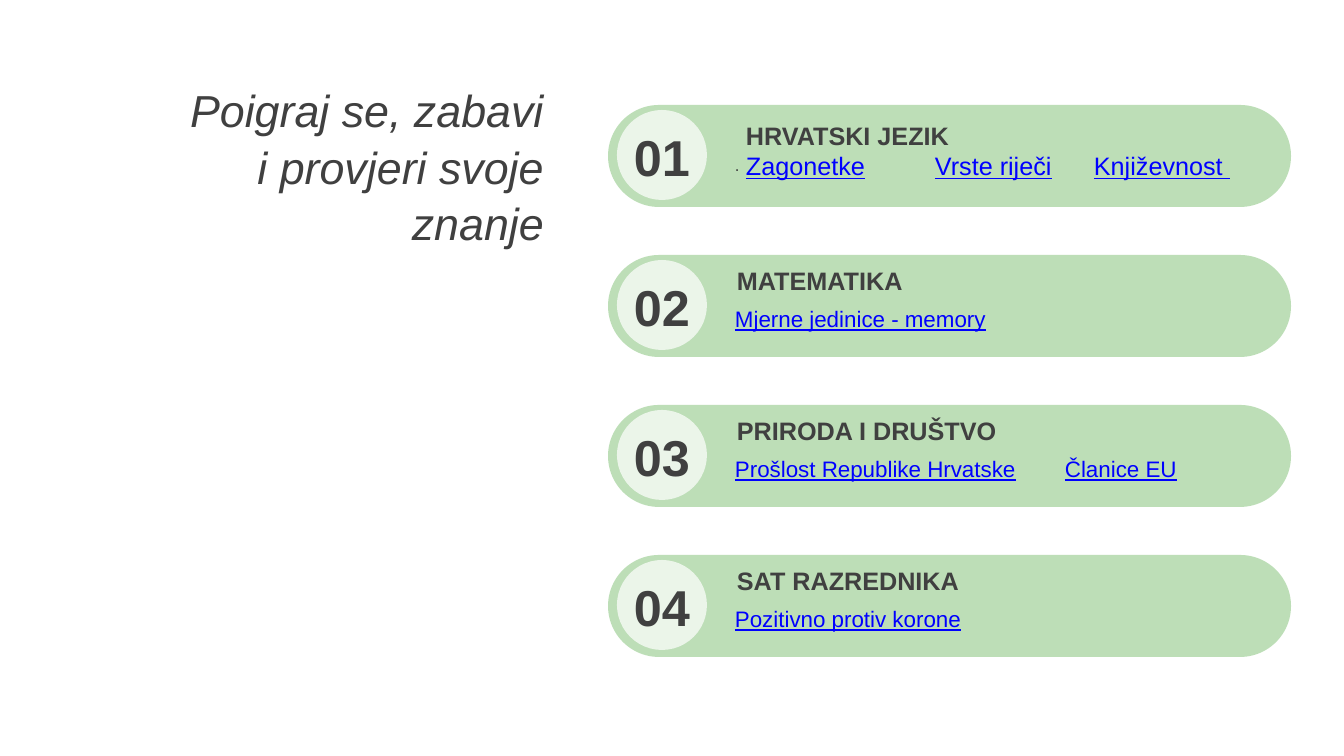
"""Builds a slide with a quiz title and four numbered subject bars."""
from lxml import etree
from pptx import Presentation, util as u
from pptx.dml.color import RGBColor
from pptx.enum import shapes, text
from pptx.oxml.ns import qn

TITLE = "Poigraj se, zabavi i provjeri svoje znanje"
MAIN_LINKS = ["Zagonetke", "Vrste riječi", "Književnost "]
SUBJECTS = [
    ("HRVATSKI JEZIK", ["."]),
    ("MATEMATIKA", ["Mjerne jedinice - memory"]),
    ("PRIRODA I DRUŠTVO", ["Prošlost Republike Hrvatske", "Članice EU"]),
    ("SAT RAZREDNIKA", ["Pozitivno protiv korone"]),
]
MAIN_TABS = [189, 348]
LINK_TABS = [330]
FONT, DARK, LINK, GREEN, WHITE = "Arial", "404040", "0000FF", "5AAE4C", "FFFFFF"
BAR_LEFT, BAR_TOP, BAR_PITCH = 608, 105, 150


def px(length):
    return u.Emu(round(length * 914400 / 100.8))


def rgb(color):
    return RGBColor.from_string(color)


def add_panel(parent, kind, box, color, opacity):
    shape = parent.shapes.add_shape(kind, *map(px, box))
    shape.shadow.inherit = False
    shape.fill.solid()
    shape.fill.fore_color.rgb = rgb(color)
    shape.line.fill.background()
    fill = shape._element.spPr.find(qn("a:solidFill"))
    etree.SubElement(fill[0], qn("a:alpha"), val=str(opacity * 1000))
    return shape


def set_tabs(paragraph, stops):
    tab_list = etree.SubElement(paragraph._p.get_or_add_pPr(), qn("a:tabLst"))
    for stop in stops:
        etree.SubElement(tab_list, qn("a:tab"), pos=str(px(stop)), algn="l")


def add_text(parent, box, lines, size, color=DARK, bold=False, italic=False,
             align=text.PP_ALIGN.LEFT, anchor=text.MSO_ANCHOR.TOP,
             inset=12, spacing=None, tabs=()):
    shape = parent.shapes.add_textbox(*map(px, box))
    frame = shape.text_frame
    frame.word_wrap = True
    frame.vertical_anchor = anchor
    frame.margin_left = frame.margin_right = px(inset)
    frame.margin_top = frame.margin_bottom = px(5)
    for index, pieces in enumerate(lines):
        paragraph = frame.add_paragraph() if index else frame.paragraphs[0]
        paragraph.alignment = align
        if spacing:
            paragraph.line_spacing = spacing
        is_links = index > 0 or color == LINK
        if is_links and len(pieces) > 1:
            set_tabs(paragraph, tabs)
        for position, piece in enumerate(pieces):
            if position:
                add_run(paragraph, "\t", size, DARK)
            add_run(paragraph, piece, size, LINK if is_links else color,
                    bold and not is_links, italic, is_links)


def add_run(paragraph, words, size, color, bold=False, italic=False, underline=False):
    run = paragraph.add_run()
    run.text = words
    font = run.font
    font.name, font.size, font.color.rgb = FONT, u.Pt(size), rgb(color)
    font.bold, font.italic, font.underline = bold, italic, underline


def add_subject(slide, index, heading, links):
    top = BAR_TOP + index * BAR_PITCH
    group = slide.shapes.add_group_shape()
    bar = add_panel(group, shapes.MSO_SHAPE.ROUNDED_RECTANGLE,
                    (BAR_LEFT, top, 683, 102), GREEN, 40)
    bar.adjustments[0] = 0.5
    add_panel(group, shapes.MSO_SHAPE.OVAL, (BAR_LEFT + 9, top + 5, 90, 90), WHITE, 70)
    first = index == 0
    add_text(group, (725, top + 45, 514, 37), [links], 12 if first else 16,
             color=DARK if first else LINK, inset=10, tabs=LINK_TABS)
    lines = [[heading], MAIN_LINKS] if first else [[heading]]
    left, offset, height = (734, 10, 72) if first else (725, 5, 40)
    add_text(group, (left, top + offset, 514, height), lines, 18, bold=True, tabs=MAIN_TABS)
    add_text(group, (BAR_LEFT, top + 15, 108, 72), [[f"{index + 1:02}"]], 36, bold=True,
             align=text.PP_ALIGN.CENTER, anchor=text.MSO_ANCHOR.MIDDLE)


def main():
    presentation = Presentation()
    presentation.slide_width, presentation.slide_height = px(1344), px(756)
    slide = presentation.slides.add_slide(presentation.slide_layouts[6])
    add_text(slide, (178, 58, 376, 214), [[TITLE]], 32, italic=True, inset=10, spacing=1.05,
             align=text.PP_ALIGN.RIGHT, anchor=text.MSO_ANCHOR.MIDDLE)
    for index, (heading, links) in enumerate(SUBJECTS):
        add_subject(slide, index, heading, links)
    presentation.save("out.pptx")


if __name__ == "__main__":
    main()
